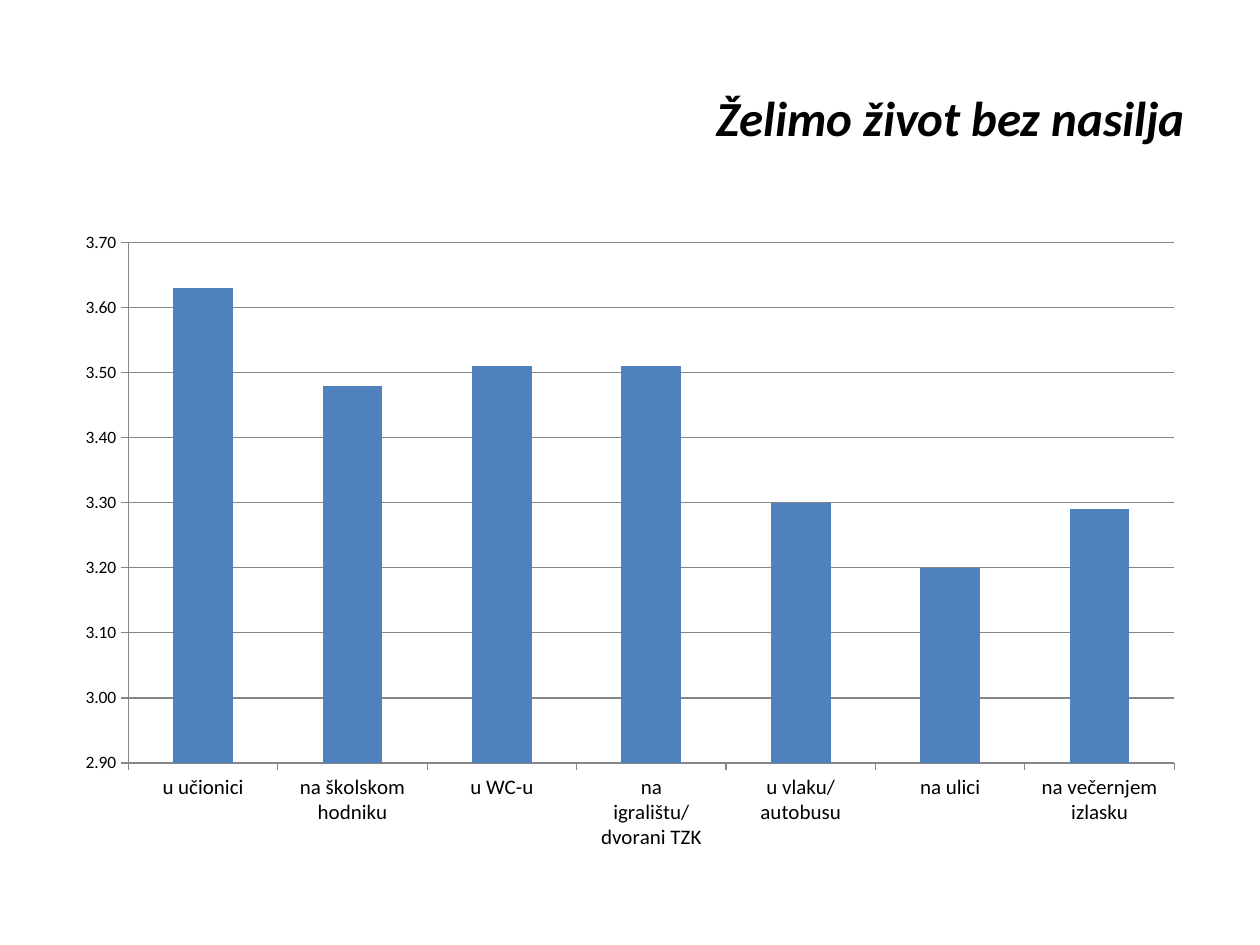
from dataclasses import dataclass

from pptx import Presentation
from pptx.chart.data import CategoryChartData
from pptx.dml.color import RGBColor
from pptx.enum.chart import XL_CHART_TYPE, XL_TICK_MARK
from pptx.enum.text import MSO_ANCHOR, PP_ALIGN
from pptx.util import Inches, Pt


@dataclass(frozen=True)
class Theme:
    font: str = "Calibri"
    text: RGBColor = RGBColor(0x00, 0x00, 0x00)
    bar: RGBColor = RGBColor(0x4F, 0x81, 0xBD)
    line: RGBColor = RGBColor(0x86, 0x86, 0x86)
    title_size: Pt = Pt(28)
    category_size: Pt = Pt(12)
    value_size: Pt = Pt(10)


theme = Theme()
ratings = {
    "u učionici": 3.63,
    "na školskom hodniku": 3.48,
    "u WC-u": 3.51,
    "na igralištu/dvorani TZK": 3.51,
    "u vlaku/autobusu": 3.30,
    "na ulici": 3.20,
    "na večernjem izlasku": 3.29,
}

presentation = Presentation()
presentation.slide_width = Inches(10)
presentation.slide_height = Inches(7.5)
slide = presentation.slides.add_slide(presentation.slide_layouts[6])

# Title
title = slide.shapes.add_textbox(Inches(0.5), Inches(0.3), Inches(9), Inches(1.25))
text_frame = title.text_frame
text_frame.word_wrap = True
text_frame.vertical_anchor = MSO_ANCHOR.MIDDLE
paragraph = text_frame.paragraphs[0]
paragraph.text = "Želimo život bez nasilja"
paragraph.alignment = PP_ALIGN.RIGHT
paragraph.font.name = theme.font
paragraph.font.size = theme.title_size
paragraph.font.bold = True
paragraph.font.italic = True
paragraph.font.color.rgb = theme.text

# Ratings by place
chart_data = CategoryChartData(number_format="0.00")
chart_data.categories = list(ratings)
chart_data.add_series("Series 1", list(ratings.values()))
chart = slide.shapes.add_chart(
    XL_CHART_TYPE.COLUMN_CLUSTERED,
    Inches(0.5), Inches(1.75), Inches(9), Inches(4.95), chart_data,
).chart
chart.has_title = False
chart.has_legend = False
chart.font.name = theme.font
chart.font.size = theme.value_size
chart.font.color.rgb = theme.text

plot = chart.plots[0]
plot.gap_width = 150
plot.vary_by_categories = False
fill = plot.series[0].format.fill
fill.solid()
fill.fore_color.rgb = theme.bar

category_axis, value_axis = chart.category_axis, chart.value_axis
for axis in (category_axis, value_axis):
    axis.major_tick_mark = XL_TICK_MARK.OUTSIDE
    axis.minor_tick_mark = XL_TICK_MARK.NONE
    axis.format.line.color.rgb = theme.line
    axis.format.line.width = Pt(0.75)
category_axis.tick_labels.font.size = theme.category_size

value_axis.minimum_scale = 2.9
value_axis.maximum_scale = 3.7
value_axis.major_unit = 0.1
value_axis.tick_labels.number_format = "0.00"
value_axis.tick_labels.number_format_is_linked = False
value_axis.has_major_gridlines = True
value_axis.major_gridlines.format.line.color.rgb = theme.line
value_axis.major_gridlines.format.line.width = Pt(0.75)

presentation.save("out.pptx")
